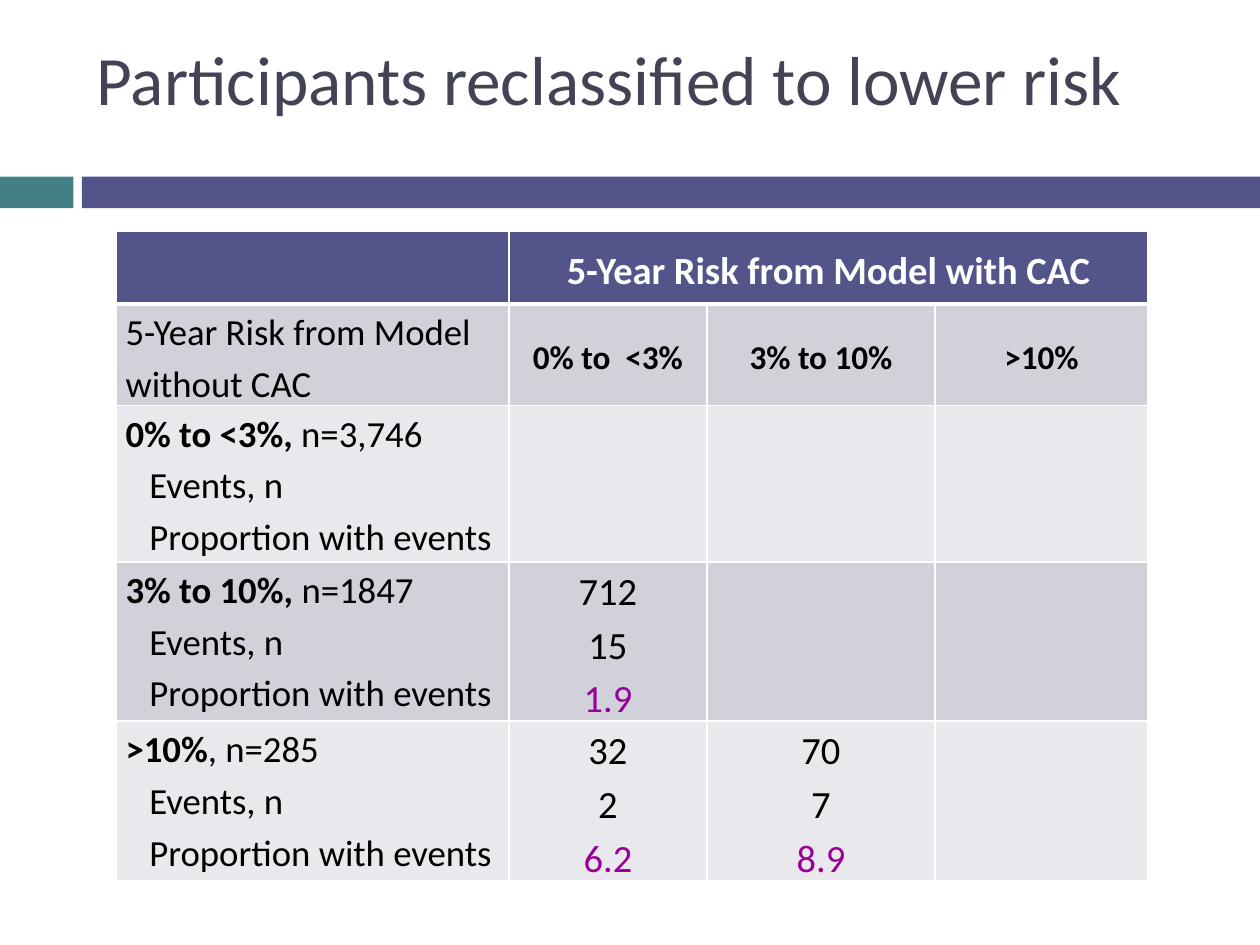
from pptx import Presentation, util as u
from pptx.dml.color import RGBColor
from pptx.enum import shapes, text
from pptx.oxml import parse_xml
from pptx.oxml.ns import nsdecls

COLORS = {"teal": "438086", "indigo": "53548A", "title": "424456",
          "dark_band": "D1D1DA", "light_band": "E9E9ED",
          "white": "FFFFFF", "black": "000000", "purple": "990099"}
CENTER = text.PP_ALIGN.CENTER
LEFT = text.PP_ALIGN.LEFT
MIDDLE = text.MSO_ANCHOR.MIDDLE
TOP = text.MSO_ANCHOR.TOP


class SlideBuilder:
    font = "Calibri"

    def __init__(self, slide):
        self.slide = slide

    def color(self, name):
        return RGBColor.from_string(COLORS[name])

    def run(self, paragraph, words, size, color="black", bold=False):
        run = paragraph.add_run()
        run.text = words
        run.font.name = self.font
        run.font.size = u.Pt(size)
        run.font.bold = bold
        run.font.color.rgb = self.color(color)

    def bar(self, left, width, color):
        shape = self.slide.shapes.add_shape(
            shapes.MSO_SHAPE.RECTANGLE, u.Cm(left), u.Cm(3.56), u.Cm(width), u.Cm(0.64))
        shape.shadow.inherit = False
        shape.fill.solid()
        shape.fill.fore_color.rgb = self.color(color)
        shape.line.fill.background()

    def title(self, words):
        shape = self.slide.shapes.add_textbox(u.Cm(1.7), u.Cm(0.2), u.Cm(22.66), u.Cm(2.74))
        frame = shape.text_frame
        frame.word_wrap = True
        frame.vertical_anchor = MIDDLE
        self.run(frame.paragraphs[0], words, 39.6, "title")

    def table(self, left, top, widths, heights):
        frame = self.slide.shapes.add_table(
            len(heights), len(widths), u.Cm(left), u.Cm(top),
            u.Cm(sum(widths)), u.Cm(sum(heights)))
        table = frame.table
        for column, width in zip(table.columns, widths):
            column.width = u.Cm(width)
        for row, height in zip(table.rows, heights):
            row.height = u.Cm(height)
        return table

    def paint_cell(self, cell, fill, edges):
        properties = cell._tc.get_or_add_tcPr()
        for side, points in edges.items():
            properties.append(parse_xml(
                f'<a:ln{side} {nsdecls("a")} w="{u.Pt(points)}"><a:solidFill>'
                f'<a:srgbClr val="{COLORS["white"]}"/></a:solidFill></a:ln{side}>'))
        cell.fill.solid()
        cell.fill.fore_color.rgb = self.color(fill)

    def write_cell(self, cell, lines, align=LEFT, anchor=TOP, before=0, indent=0):
        """Each line is a list of (words, size, color, bold) runs."""
        cell.margin_left = cell.margin_right = u.Cm(0.19)
        cell.margin_top = cell.margin_bottom = 0
        cell.vertical_anchor = anchor
        frame = cell.text_frame
        for number, runs in enumerate(lines):
            paragraph = frame.add_paragraph() if number else frame.paragraphs[0]
            paragraph.alignment = align
            paragraph.line_spacing = 1.15
            paragraph.space_before = u.Pt(before)
            if number and indent:
                paragraph._p.get_or_add_pPr().set("marL", str(u.Cm(indent)))
            for run in runs:
                self.run(paragraph, *run)


def main():
    presentation = Presentation()
    presentation.slide_width, presentation.slide_height = u.Cm(25.4), u.Cm(19.05)
    builder = SlideBuilder(presentation.slides.add_slide(presentation.slide_layouts[6]))

    # Divider bars and title
    builder.bar(0, 1.48, "teal")
    builder.bar(1.65, 23.75, "indigo")
    builder.title("Participants reclassified to lower risk")

    # Table grid
    table = builder.table(2.34, 4.66, [7.92, 3.99, 4.6, 4.29], [1.47, 1.88, 3.15, 3.15, 3.15])
    for row in range(5):
        fill = "indigo" if row == 0 else "dark_band" if row % 2 else "light_band"
        edges = {"L": 1, "R": 1, "T": 3 if row == 1 else 1, "B": 1 if row else 3}
        for column in range(4):
            builder.paint_cell(table.cell(row, column), fill, edges)

    # Headings
    table.cell(0, 1).merge(table.cell(0, 3))
    builder.write_cell(table.cell(0, 1), [[("5-Year Risk from Model with CAC", 22, "white", True)]],
                       CENTER, MIDDLE, 6)
    builder.write_cell(table.cell(1, 0), [[("5-Year Risk from Model without CAC", 21)]],
                       LEFT, MIDDLE, 6)
    for column, label in enumerate(["0% to  <3%", "3% to 10%", ">10%"], 1):
        builder.write_cell(table.cell(1, column), [[(label, 19, "black", True)]],
                           CENTER, MIDDLE, 6)

    # Risk groups: label, count, then (participants, events, proportion) per column
    groups = [("0% to <3%, ", "n=3,746", []),
              ("3% to 10%, ", "n=1847", [("712", "15", "1.9")]),
              (">10%", ", n=285", [("32", "2", "6.2"), ("70", "7", "8.9")])]
    for row, (label, count, results) in enumerate(groups, 2):
        builder.write_cell(table.cell(row, 0), [
            [(label, 21, "black", True), (count, 21)],
            [("Events, n", 21)],
            [("Proportion with events", 21)]], indent=0.48)
        for column, (participants, events, proportion) in enumerate(results, 1):
            builder.write_cell(table.cell(row, column), [
                [(participants, 22)], [(events, 22)], [(proportion, 22, "purple")]], CENTER)

    presentation.save("out.pptx")


if __name__ == "__main__":
    main()
